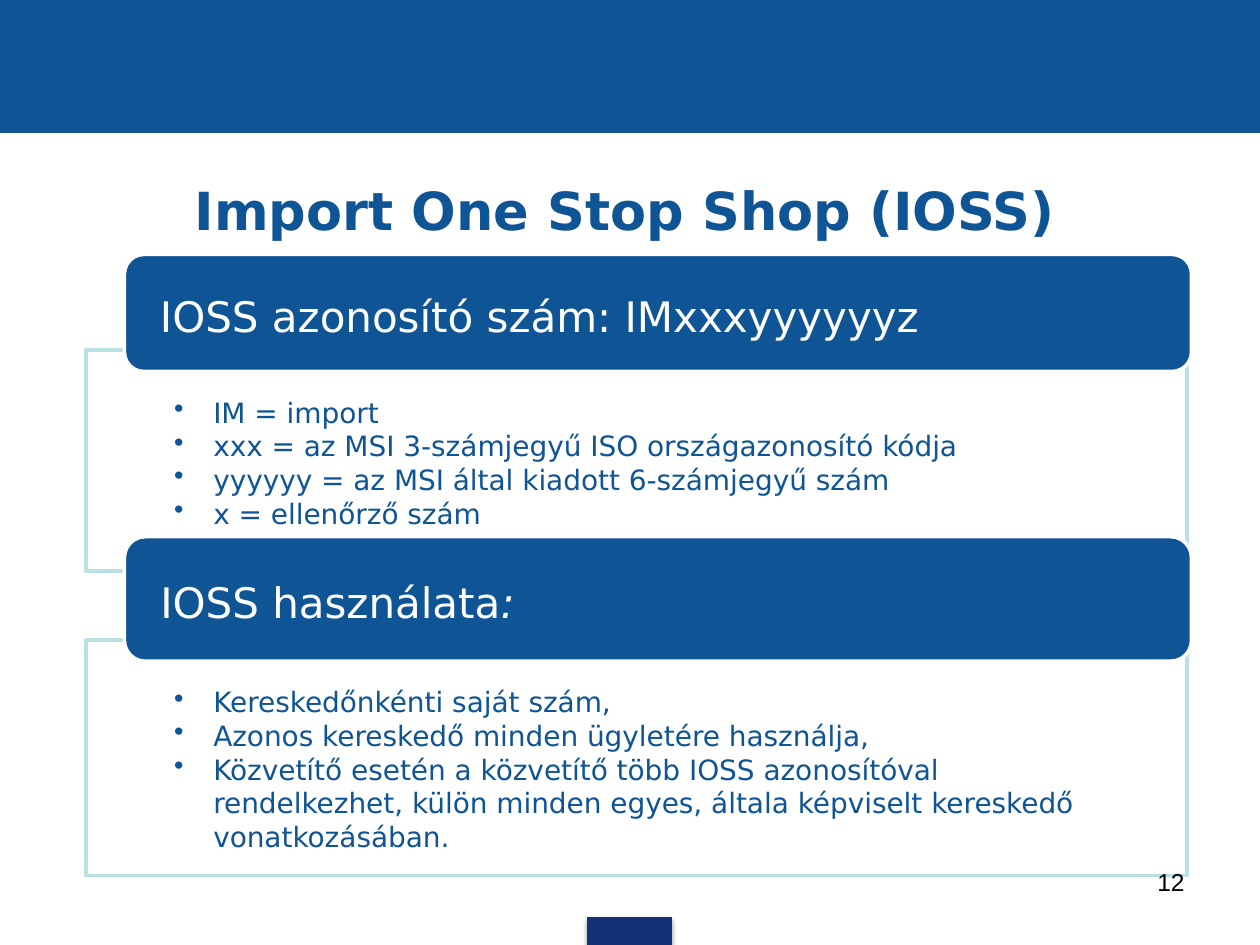
from lxml import etree
from pptx import Presentation
from pptx.dml.color import RGBColor as RGB
from pptx.enum.shapes import MSO_SHAPE as SHAPE
from pptx.enum.text import MSO_ANCHOR as ANCHOR, PP_ALIGN as ALIGN
from pptx.oxml.ns import qn
from pptx.util import Cm, Pt

COLORS = {"blue": "0F5494", "navy": "133176", "aqua": "BBE0E3",
          "white": "FFFFFF", "black": "000000"}
FONT = "DejaVu Sans"

SECTIONS = [
    {"head": [("IOSS azonosító szám: IMxxxyyyyyyz", False)],
     "head_top": 5.13, "head_height": 2.36,
     "panel_top": 7.06, "panel_height": 4.45,
     "items": ["IM = import",
               "xxx = az MSI 3-számjegyű ISO országazonosító kódja",
               "yyyyyy = az MSI által kiadott 6-számjegyű szám",
               "x = ellenőrző szám"]},
    {"head": [("IOSS használata", False), (":", True)],
     "head_top": 10.82, "head_height": 2.51,
     "panel_top": 12.9, "panel_height": 4.75,
     "items": ["Kereskedőnkénti saját szám,",
               "Azonos kereskedő minden ügyletére használja,",
               "Közvetítő esetén a közvetítő több IOSS azonosítóval rendelkezhet, "
               "külön minden egyes, általa képviselt kereskedő vonatkozásában."]},
]


class Deck:
    """Holds the style and the current slide, and draws each kind of element."""

    def __init__(self):
        self.prs = Presentation()
        self.prs.slide_width, self.prs.slide_height = Cm(25.4), Cm(19.05)
        self.slide = self.prs.slides.add_slide(self.prs.slide_layouts[5])

    def color(self, name):
        return RGB.from_string(COLORS[name])

    def style(self, font, size, color, bold=False, name=FONT):
        font.size, font.bold, font.name = Pt(size), bold, name
        font.color.rgb = self.color(color)

    def frame(self, sp, anchor, insets):
        tf = sp.text_frame
        tf.word_wrap, tf.vertical_anchor = True, anchor
        (tf.margin_left, tf.margin_top,
         tf.margin_right, tf.margin_bottom) = [Cm(v) for v in insets]
        return tf

    def box(self, kind, at, fill, line, width=0.75):
        sp = self.slide.shapes.add_shape(kind, *[Cm(v) for v in at])
        sp.shadow.inherit = False
        sp.fill.solid()
        sp.fill.fore_color.rgb = self.color(fill)
        sp.line.color.rgb = self.color(line)
        sp.line.width = Pt(width)
        return sp

    def tab(self, at):
        sp = self.box(SHAPE.RECTANGLE, at, "navy", "navy")
        effects = sp._element.spPr.find(qn("a:effectLst"))
        shadow = etree.SubElement(effects, qn("a:outerShdw"), blurRad=str(Pt(3.1)),
                                  dist=str(Pt(1.8)), dir="5400000", rotWithShape="0")
        clr = etree.SubElement(shadow, qn("a:srgbClr"), val=COLORS["black"])
        etree.SubElement(clr, qn("a:alpha"), val="35000")

    def title(self, text, at):
        sp = self.slide.shapes.title
        sp.left, sp.top, sp.width, sp.height = [Cm(v) for v in at]
        sp.text_frame.text = text
        sp.text_frame.vertical_anchor = ANCHOR.MIDDLE
        p = sp.text_frame.paragraphs[0]
        p.alignment = ALIGN.CENTER
        self.style(p.runs[0].font, 30, "blue", bold=True)

    def panel(self, items, at):
        sp = self.box(SHAPE.RECTANGLE, at, "white", "aqua", 2)
        clr = sp._element.spPr.find(qn("a:solidFill")).find(qn("a:srgbClr"))
        etree.SubElement(clr, qn("a:alpha"), val="90000")
        tf = self.frame(sp, ANCHOR.TOP, (1.78, 0.91, 1.78, 0.3))
        tf.text = "\n".join(items)
        for p in tf.paragraphs:
            p.alignment = ALIGN.LEFT
            pPr = p._p.get_or_add_pPr()
            pPr.set("marL", str(Cm(0.79)))
            pPr.set("indent", str(-Cm(0.79)))
            etree.SubElement(pPr, qn("a:buChar"), char="•")
            self.style(p.runs[0].font, 16, "blue")

    def header(self, parts, at):
        sp = self.box(SHAPE.ROUNDED_RECTANGLE, at, "blue", "white", 2)
        p = self.frame(sp, ANCHOR.MIDDLE, (0.6, 0.1, 0.6, 0)).paragraphs[0]
        p.alignment = ALIGN.LEFT
        for text, italic in parts:
            r = p.add_run()
            r.text = text
            self.style(r.font, 24, "white")
            r.font.italic = italic

    def number(self, text, at):
        sp = self.slide.shapes.add_textbox(*[Cm(v) for v in at])
        tf = self.frame(sp, ANCHOR.TOP, (0.25, 0.13, 0.25, 0.13))
        tf.text = text
        p = tf.paragraphs[0]
        p.alignment = ALIGN.RIGHT
        self.style(p.runs[0].font, 14, "black", name="Arial")


def main():
    deck = Deck()
    deck.box(SHAPE.RECTANGLE, (0, 0, 25.4, 2.67), "blue", "blue")
    deck.tab((11.84, 18.49, 1.7, 0.56))
    deck.title("Import One Stop Shop (IOSS)", (1.17, 3.12, 22.86, 2.21))
    for s in SECTIONS:
        deck.panel(s["items"], (1.73, s["panel_top"], 22.2, s["panel_height"]))
        deck.header(s["head"], (2.51, s["head_top"], 21.51, s["head_height"]))
    deck.number("12", (18.21, 17.35, 5.92, 1.32))
    deck.prs.save("out.pptx")


if __name__ == "__main__":
    main()
